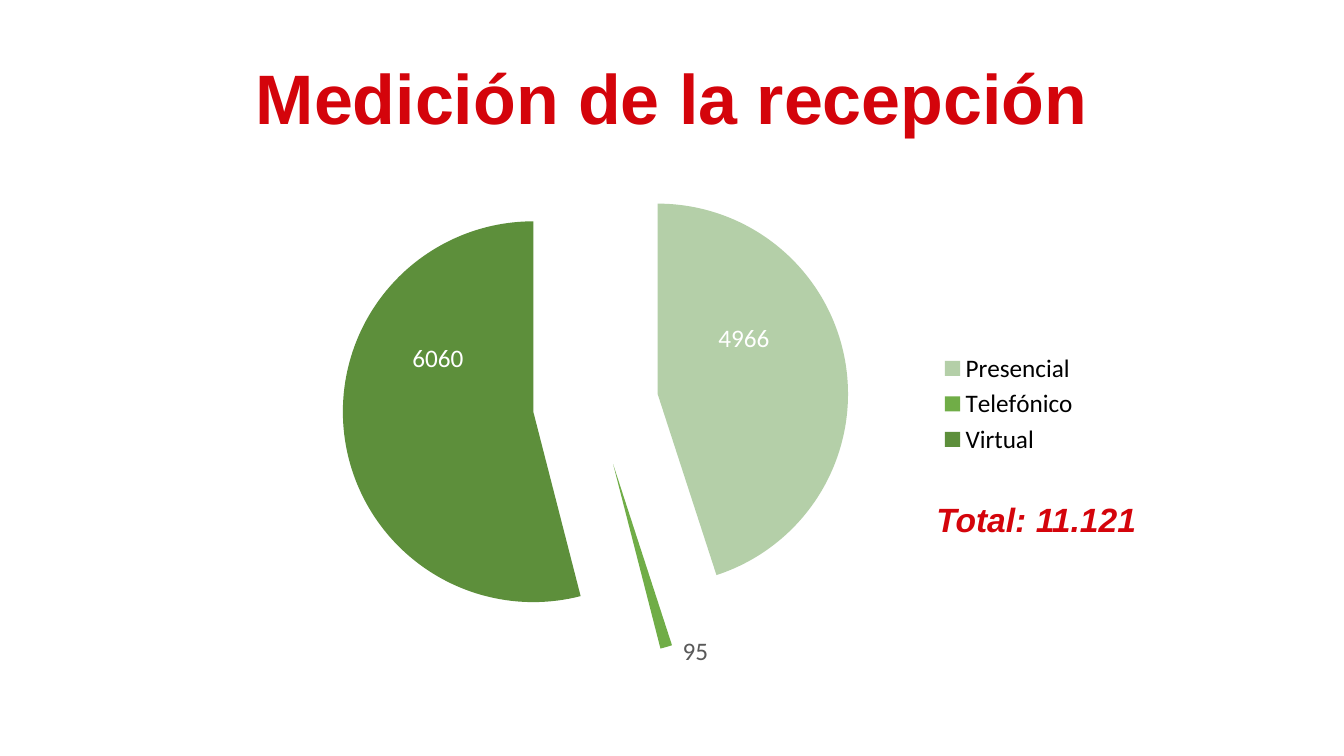
"""Build the slide on how requests were received, with an exploded pie chart."""
from lxml.etree import SubElement
from pptx import Presentation
from pptx.chart.data import CategoryChartData as ChartData
from pptx.dml.color import RGBColor as Color
from pptx.enum.chart import XL_CHART_TYPE as Kind, XL_LEGEND_POSITION as Side
from pptx.enum.text import MSO_ANCHOR as Anchor, MSO_AUTO_SIZE as Fit, PP_ALIGN as Align
from pptx.oxml.ns import qn
from pptx.util import Pt

HUES = {"red": "D4040B", "white": "FFFFFF", "gray": "595959", "black": "000000",
        "pale": "B4CFA8", "mid": "70AD47", "dark": "5D8F3B"}


def style(font, hue, form):
    """Set the colour and the other values of a font."""
    font.color.rgb = Color.from_string(HUES[hue])
    for key, val in form.items():
        setattr(font, key, val)


def write(box, text, hue, form, space=1.0):
    """Put one centred line of text in a box."""
    frame = box.text_frame
    frame.text = text
    frame.vertical_anchor = Anchor.MIDDLE
    line = frame.paragraphs[0]
    line.alignment = Align.CENTER
    line.line_spacing = space
    style(line.font, hue, form)


deck = Presentation()
deck.slide_width, deck.slide_height = Pt(960), Pt(540)
slide = deck.slides.add_slide(deck.slide_layouts[5])
shapes = slide.shapes

head = {"name": "Arial", "bold": True}
plain = {"name": "Calibri", "size": Pt(18)}

title = shapes.title
place = {"left": 152.6, "top": 42, "width": 655.2, "height": 61.2}
for key, val in place.items():
    setattr(title, key, Pt(val))
write(title, "Medición de la recepción", "red", {**head, "size": Pt(50)}, 0.9)
title.text_frame.auto_size = Fit.NONE

total = shapes.add_textbox(Pt(655.9), Pt(349.2), Pt(168.5), Pt(46.1))
total.text_frame.word_wrap = True
write(total, "Total: 11.121", "red", {**head, "size": Pt(24), "italic": True}, 0.9)

parts = [("Presencial", 4966, "pale", "white", 505.8, 226.5, 51.1),
         ("Telefónico", 95, "mid", "gray", 480.2, 450, 33.1),
         ("Virtual", 6060, "dark", "white", 287.3, 241.2, 51.1)]
whole = sum(part[1] for part in parts)

data = ChartData()
data.categories = [part[0] for part in parts]
data.add_series("Series 1", [round(100 * part[1] / whole) for part in parts])
chart = shapes.add_chart(Kind.PIE, Pt(181.9), Pt(97.7), Pt(596.2), Pt(381.6), data).chart
chart.has_title = False
chart.has_legend = True
chart.legend.position = Side.RIGHT
chart.legend.include_in_layout = False
for font in (chart.font, chart.legend.font):
    style(font, "black", plain)

pie = chart.plots[0]
pie.vary_by_categories = True
series = pie.series[0]

for spot, (name, count, fill, hue, left, top, width) in enumerate(parts):
    slice_fill = series.points[spot].format.fill
    slice_fill.solid()
    slice_fill.fore_color.rgb = Color.from_string(HUES[fill])
    label = shapes.add_textbox(Pt(left), Pt(top), Pt(width), Pt(28.8))
    label.text_frame.word_wrap = False
    label.text_frame.auto_size = Fit.SHAPE_TO_FIT_TEXT
    write(label, str(count), hue, plain)

root = series._element
burst = SubElement(root, qn("c:explosion"), val="33")
root.find(qn("c:dPt")).addprevious(burst)

deck.save("out.pptx")
